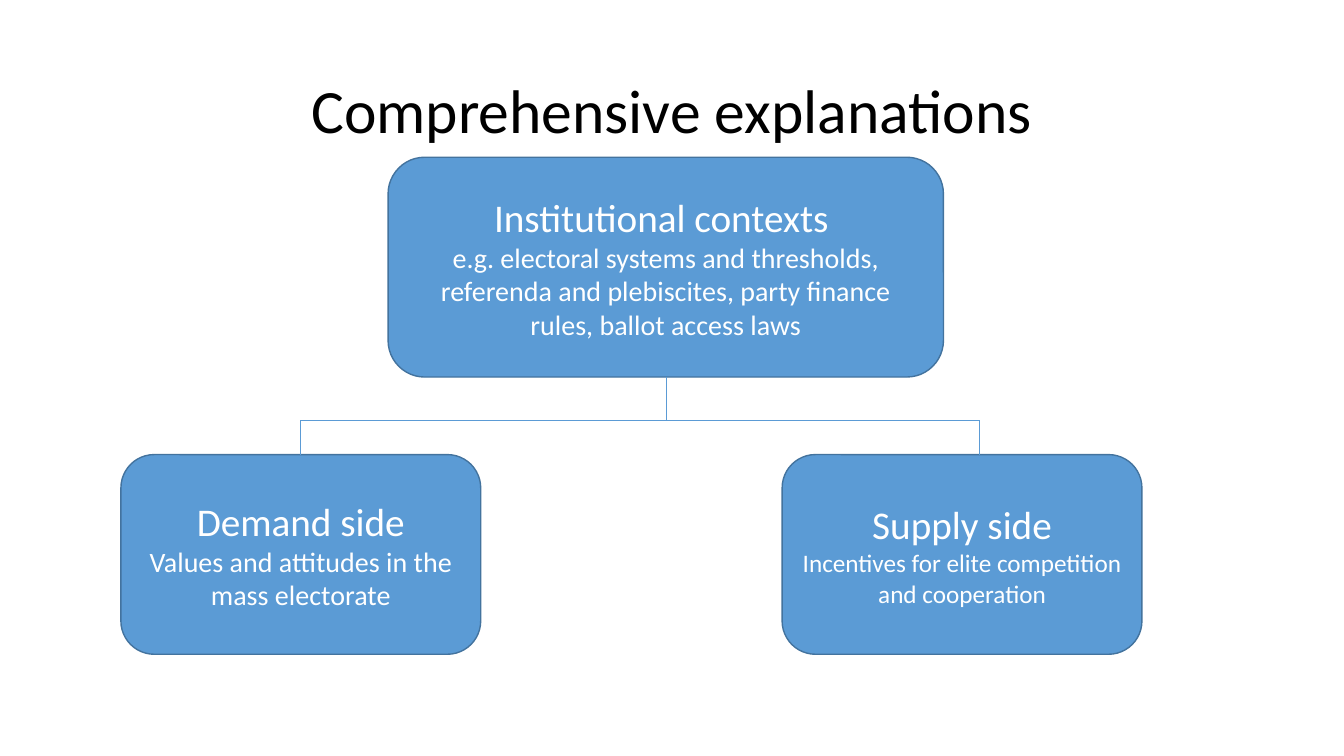
from lxml import etree
from pptx import Presentation
from pptx.dml.color import RGBColor
from pptx.enum.shapes import MSO_CONNECTOR, MSO_SHAPE
from pptx.enum.text import MSO_ANCHOR, PP_ALIGN
from pptx.oxml.ns import qn
from pptx.util import Pt

ROUNDED = MSO_SHAPE.ROUNDED_RECTANGLE
STRAIGHT = MSO_CONNECTOR.STRAIGHT
MIDDLE = MSO_ANCHOR.MIDDLE
CENTER = PP_ALIGN.CENTER
FONT = "Calibri"
BLUE, DARK_BLUE, WHITE, BLACK = "5B9BD5", "43739E", "FFFFFF", "000000"

TOP_BOX = (277.2, 112.3, 396.7, 157)
DEMAND_BOX = (86.4, 324.7, 257, 142.6)
SUPPLY_BOX = (558.7, 324.7, 257, 142.6)
TRUNK_X, DEMAND_X, SUPPLY_X = 475.9, 214.6, 699.8
BUS_Y = 300.2


def color(hex_string):
    """Return the colour for a hex string."""
    return RGBColor.from_string(hex_string)


def write_paragraph(p, text, size, hex_string):
    """Fill a centred paragraph with one formatted run."""
    p.text = text
    p.alignment = CENTER
    font = p.runs[0].font
    font.name, font.size = FONT, Pt(size)
    font.color.rgb = color(hex_string)


def add_title(s, box, text):
    """Place the slide title in the given box."""
    sp = s.shapes.title
    sp.left, sp.top, sp.width, sp.height = map(Pt, box)
    tf = sp.text_frame
    tf.vertical_anchor = MIDDLE
    write_paragraph(tf.paragraphs[0], text, 44, BLACK)
    tf.paragraphs[0].line_spacing = 0.9


def add_factor(s, box, heading, detail, detail_size):
    """Draw a rounded box with a heading and its explanation."""
    sp = s.shapes.add_shape(ROUNDED, *map(Pt, box))
    sp.shadow.inherit = False
    sp.fill.solid()
    sp.fill.fore_color.rgb = color(BLUE)
    sp.line.color.rgb = color(DARK_BLUE)
    sp.line.width = Pt(1)
    tf = sp.text_frame
    tf.word_wrap = True
    tf.vertical_anchor = MIDDLE
    write_paragraph(tf.paragraphs[0], heading, 28, WHITE)
    write_paragraph(tf.add_paragraph(), detail, detail_size, WHITE)


def add_line(s, x1, y1, x2, y2):
    """Draw one thin line of the tree."""
    line = s.shapes.add_connector(STRAIGHT, Pt(x1), Pt(y1), Pt(x2), Pt(y2))
    line.line.color.rgb = color(BLUE)
    line.line.width = Pt(0.5)
    etree.SubElement(line._element.spPr, qn("a:effectLst"))


def add_branches(s, parent, child):
    """Join the bottom of the parent box to the top of the child row."""
    add_line(s, TRUNK_X, parent[1] + parent[3], TRUNK_X, BUS_Y)
    add_line(s, DEMAND_X, BUS_Y, SUPPLY_X, BUS_Y)
    for x in (DEMAND_X, SUPPLY_X):
        add_line(s, x, BUS_Y, x, child[1])


def main():
    """Build and save the slide."""
    prs = Presentation()
    prs.slide_width, prs.slide_height = Pt(960), Pt(540)
    s = prs.slides.add_slide(prs.slide_layouts[5])
    add_title(s, (66, 28.8, 828, 104.4), "Comprehensive explanations")
    add_factor(s, TOP_BOX, "Institutional contexts ",
               "e.g. electoral systems and thresholds, referenda and "
               "plebiscites, party finance rules, ballot access laws", 20)
    add_factor(s, DEMAND_BOX, "Demand side",
               "Values and attitudes in the mass electorate", 20)
    add_factor(s, SUPPLY_BOX, "Supply side",
               "Incentives for elite competition and cooperation", 18)
    add_branches(s, TOP_BOX, DEMAND_BOX)
    prs.save("out.pptx")


if __name__ == "__main__":
    main()
